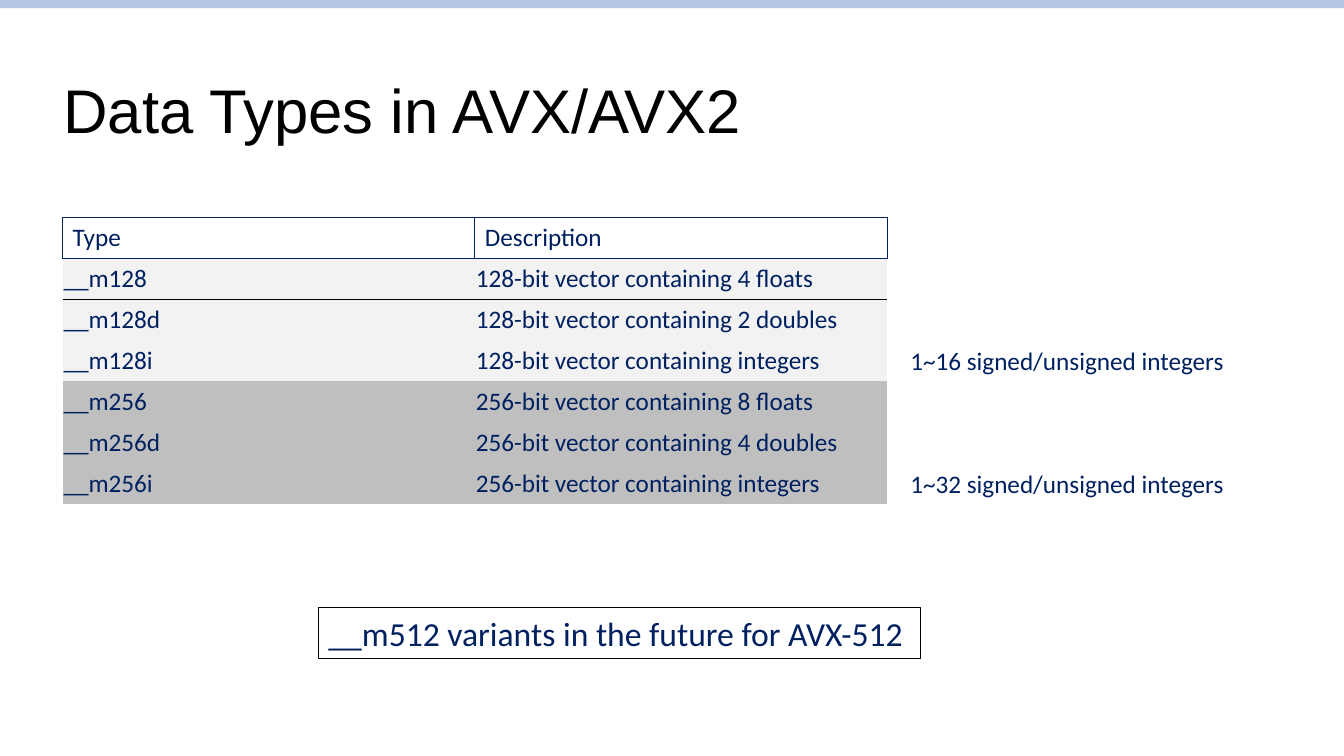
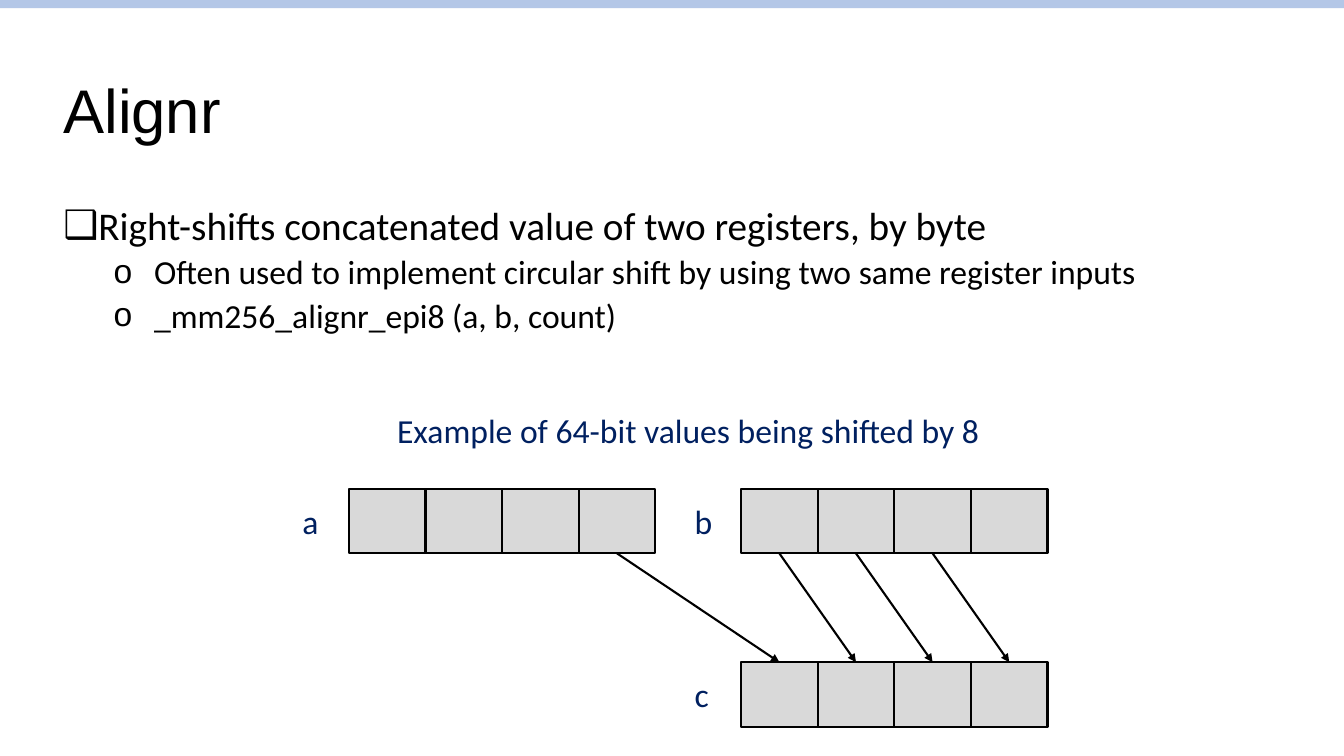
from lxml import etree
from pptx import Presentation
from pptx import util as u
from pptx.dml import color
from pptx.enum import shapes, text
from pptx.oxml import ns

NAVY, BLACK, BAND = "002060", "000000", "B4C7E7"
LIGHT, DARK, REGISTER = "F2F2F2", "BFBFBF", "D9D9D9"
PLAIN_TABLE = "{2D5ABB26-0587-4C30-8999-92F81FD0307C}"

# Text formats
TITLE = {"name": "Arial", "size": u.Pt(44), "color": BLACK}
BODY = {"name": "Calibri", "size": u.Pt(28), "color": BLACK}
SUB_BODY = {**BODY, "size": u.Pt(24)}
LABEL = {"name": "Calibri", "size": u.Pt(24), "color": NAVY}
SMALL = {**LABEL, "size": u.Pt(18)}

# Register cells
CELL_WIDTH, CELL_HEIGHT, LANES = 0.76, 0.64, 4

TYPES = [
    ("__m128", "128-bit vector containing 4 floats", LIGHT),
    ("__m128d", "128-bit vector containing 2 doubles", LIGHT),
    ("__m128i", "128-bit vector containing integers", LIGHT),
    ("__m256", "256-bit vector containing 8 floats", DARK),
    ("__m256d", "256-bit vector containing 4 doubles", DARK),
    ("__m256i", "256-bit vector containing integers", DARK),
]


def rgb(value):
    return color.RGBColor.from_string(value)


def inches(*lengths):
    return [u.Inches(length) for length in lengths]


def set_all(target, values):
    for name, value in values.items():
        setattr(target, name, value)


def add_xml(parent, tag, **attributes):
    return etree.SubElement(parent, ns.qn(tag), attributes)


def write(paragraph, content, style):
    run = paragraph.add_run()
    run.text = content
    for name, value in style.items():
        if name == "color":
            run.font.color.rgb = rgb(value)
        else:
            setattr(run.font, name, value)


def add_rectangle(slide, at, fill, line=None):
    shape = slide.shapes.add_shape(shapes.MSO_SHAPE.RECTANGLE, *inches(*at))
    shape.shadow.inherit = False
    shape.fill.solid()
    shape.fill.fore_color.rgb = rgb(fill)
    if line:
        shape.line.color.rgb = rgb(line)
        shape.line.width = u.Pt(1.5)
    else:
        shape.line.fill.background()
    return shape


def add_label(slide, content, at, style=LABEL):
    box = slide.shapes.add_textbox(*inches(*at))
    set_all(box.text_frame, {"word_wrap": False,
                             "auto_size": text.MSO_AUTO_SIZE.SHAPE_TO_FIT_TEXT})
    write(box.text_frame.paragraphs[0], content, style)
    return box


def add_titled_slide(presentation, title):
    slide = presentation.slides.add_slide(presentation.slide_layouts[6])
    add_rectangle(slide, (0, 0, 13.33, 0.08), BAND)
    frame = slide.shapes.add_textbox(*inches(0.53, 0.4, 12.27, 1.45)).text_frame
    set_all(frame, {"word_wrap": True, "vertical_anchor": text.MSO_ANCHOR.MIDDLE})
    frame.paragraphs[0].line_spacing = 0.9
    write(frame.paragraphs[0], title, TITLE)
    return slide


def add_bullet(paragraph, content, style, mark, level, left, hanging, before):
    set_all(paragraph, {"level": level, "line_spacing": 0.9,
                        "space_before": u.Pt(before)})
    write(paragraph, content, style)
    properties = paragraph._p.get_or_add_pPr()
    properties.set("marL", str(u.Inches(left)))
    properties.set("indent", str(-u.Inches(hanging)))
    add_xml(properties, "a:buFont", typeface="Arial")
    add_xml(properties, "a:buChar", char=mark)


def add_border(cell, side, line_color, points):
    line = add_xml(cell._tc.get_or_add_tcPr(), f"a:ln{side}", w=str(u.Pt(points)))
    add_xml(add_xml(line, "a:solidFill"), "a:srgbClr", val=line_color)


def add_type_table(slide):
    row_count = len(TYPES) + 1
    table = slide.shapes.add_table(row_count, 2,
                                   *inches(0.62, 2.16, 8.18, 2.84)).table
    set_all(table, {"first_row": False, "horz_banding": False})
    table._tbl.tblPr.find(ns.qn("a:tableStyleId")).text = PLAIN_TABLE

    rows = [("Type", "Description", None), *TYPES]
    for row, (*contents, fill) in enumerate(rows):
        for column, content in enumerate(contents):
            cell = table.cell(row, column)
            write(cell.text_frame.paragraphs[0], content, SMALL)
            if row == 0:
                for side in "LRTB":
                    add_border(cell, side, NAVY, 1)
                cell.fill.background()
                continue
            margins = {f"margin_{side}": u.Inches(0.01)
                       for side in ("left", "right", "top", "bottom")}
            set_all(cell, {**margins, "vertical_anchor": text.MSO_ANCHOR.MIDDLE})
            if row == 1:
                add_border(cell, "T", NAVY, 1)
                add_border(cell, "B", BLACK, 0.75)
            cell.fill.solid()
            cell.fill.fore_color.rgb = rgb(fill)


def add_register(slide, name, left, top, label_left, label_width):
    lanes = [add_rectangle(slide, (left + lane * CELL_WIDTH, top,
                                   CELL_WIDTH, CELL_HEIGHT), REGISTER, BLACK)
             for lane in range(LANES)]
    add_label(slide, name, (label_left, top + 0.07, label_width, 0.5))
    return lanes


def add_arrow(slide, source, target):
    arrow = slide.shapes.add_connector(shapes.MSO_CONNECTOR.STRAIGHT, 0, 0, 0, 0)
    arrow.begin_connect(source, 2)
    arrow.end_connect(target, 0)
    arrow.line.color.rgb = rgb(BLACK)
    arrow.line.width = u.Pt(1.5)
    add_xml(arrow.line._get_or_add_ln(), "a:tailEnd", type="triangle")
    add_xml(arrow._element.spPr, "a:effectLst")


def build_data_types(presentation):
    slide = add_titled_slide(presentation, "Data Types in AVX/AVX2")
    add_type_table(slide)
    for count, top in ((16, 3.38), (32, 4.6)):
        add_label(slide, f"1~{count} signed/unsigned integers",
                  (8.93, top, 3.35, 0.4), SMALL)
    future = add_label(slide, "__m512 variants in the future for AVX-512",
                       (3.16, 6.03, 5.97, 0.5))
    future.line.color.rgb = rgb(BLACK)
    future.line.width = u.Pt(0.75)


def build_alignr(presentation):
    slide = add_titled_slide(presentation, "Alignr")

    # Explanation
    frame = slide.shapes.add_textbox(*inches(0.53, 2, 12.27, 1.97)).text_frame
    frame.word_wrap = True
    add_bullet(frame.paragraphs[0],
               "Right-shifts concatenated value of two registers, by byte",
               BODY, "❑", 0, 0.25, 0.5, 10)
    for content in (
            "Often used to implement circular shift by using two same register inputs",
            "_mm256_alignr_epi8 (a, b, count)"):
        add_bullet(frame.add_paragraph(), content, SUB_BODY, "o", 1, 0.9, 0.4, 5)

    # Registers, and the last lanes of a + b moving into c
    a = add_register(slide, "a", 3.46, 4.85, 2.9, 0.36)
    b = add_register(slide, "b", 7.35, 4.85, 6.79, 0.38)
    c = add_register(slide, "c", 7.35, 6.57, 6.79, 0.34)
    for source, target in zip([a[-1], *b[:-1]], c):
        add_arrow(slide, source, target)
    add_label(slide, "Example of 64-bit values being shifted by 8",
              (3.84, 4.02, 6.04, 0.5))


def main():
    presentation = Presentation()
    set_all(presentation, {"slide_width": u.Inches(13.33),
                           "slide_height": u.Inches(7.5)})
    build_data_types(presentation)
    build_alignr(presentation)
    presentation.save("out.pptx")


if __name__ == "__main__":
    main()
